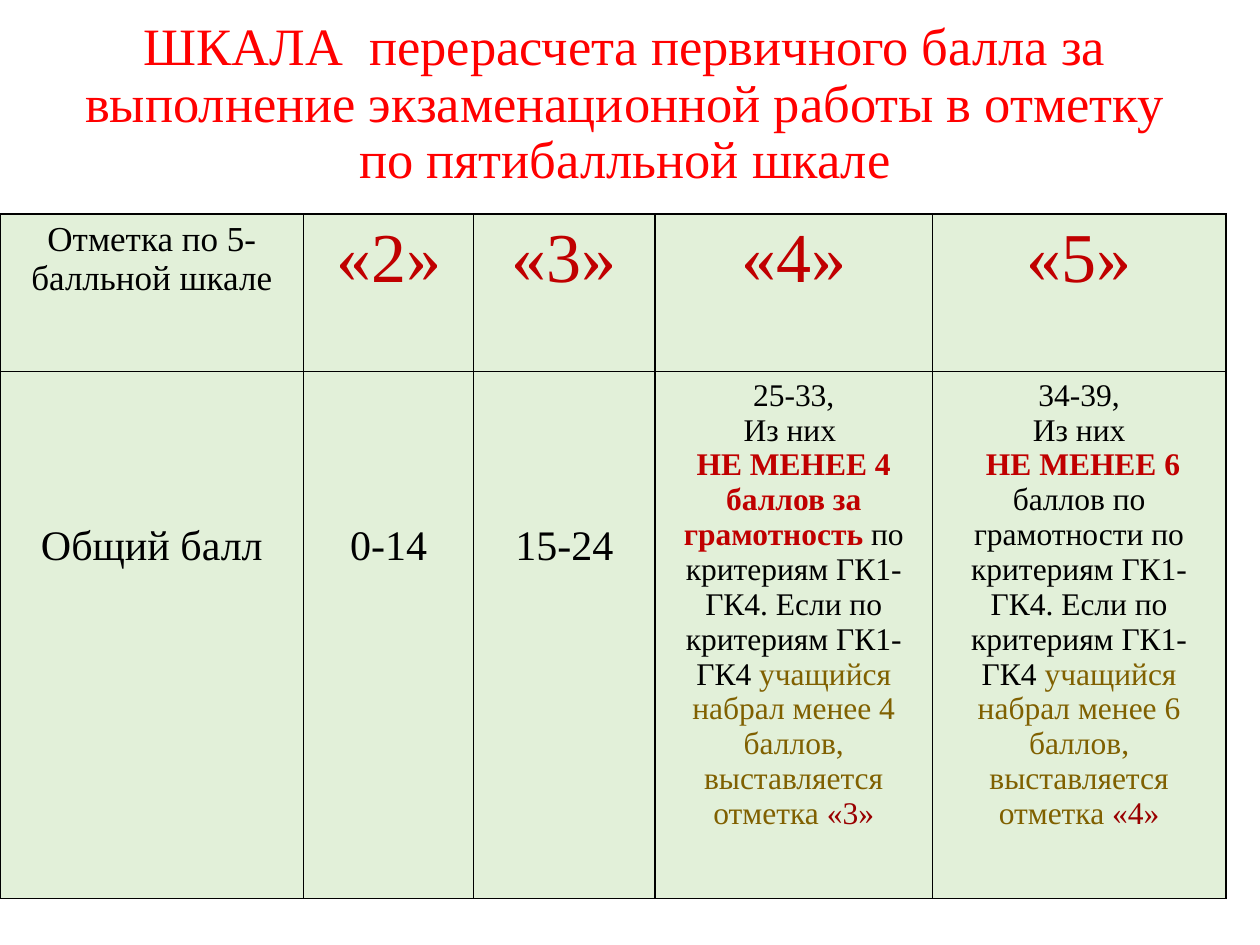
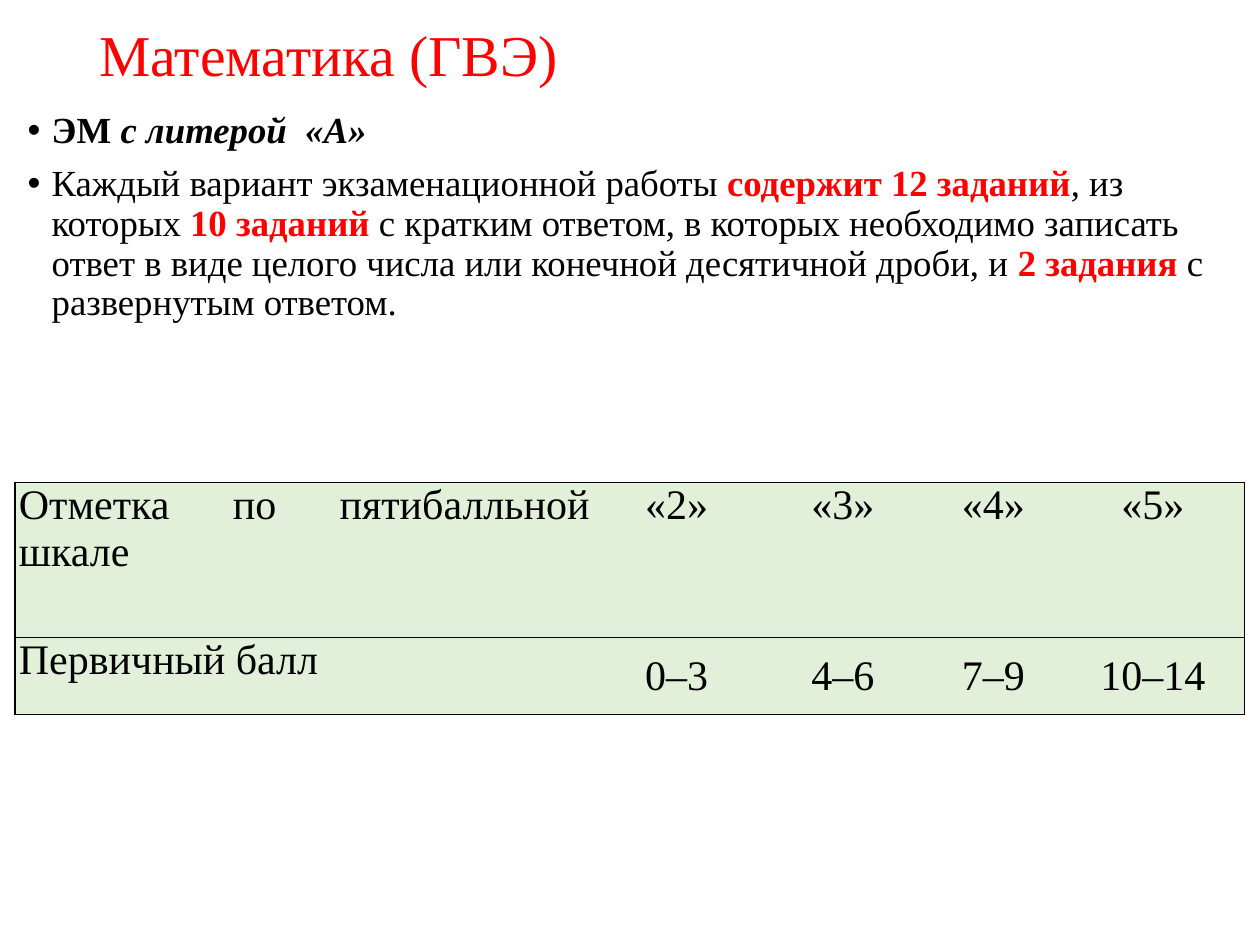
"""Build two slides on converting exam scores to five-point grades."""
import dataclasses

import lxml.etree
import pptx
import pptx.dml.color
import pptx.enum.text
import pptx.oxml.ns
import pptx.util

Inches = pptx.util.Inches
Pt = pptx.util.Pt
RGBColor = pptx.dml.color.RGBColor
Align = pptx.enum.text.PP_ALIGN
Anchor = pptx.enum.text.MSO_ANCHOR
qn = pptx.oxml.ns.qn

FONT = "Times New Roman"
BLACK = RGBColor(0x00, 0x00, 0x00)
RED = RGBColor(0xFF, 0x00, 0x00)
DARK_RED = RGBColor(0xC0, 0x00, 0x00)
MAROON = RGBColor(0x99, 0x00, 0x00)
OLIVE = RGBColor(0x80, 0x60, 0x00)
PALE_GREEN = RGBColor(0xE2, 0xF0, 0xD9)
LINE_SPACING = 0.9
GRADES = ("«2»", "«3»", "«4»", "«5»")


@dataclasses.dataclass
class Span:
    """A stretch of text in one style."""
    text: str
    color: RGBColor = BLACK
    bold: bool = False
    italic: bool = False


def write_paragraphs(frame, paragraphs, size, align):
    """Fill a text frame with paragraphs, each a list of spans."""
    for index, spans in enumerate(paragraphs):
        para = frame.add_paragraph() if index else frame.paragraphs[0]
        para.alignment = align
        for span in spans:
            run = para.add_run()
            run.text = span.text
            run.font.name = FONT
            run.font.size = Pt(size)
            run.font.color.rgb = span.color
            run.font.bold = span.bold
            run.font.italic = span.italic


def place(shape, left, top, width, height):
    """Move and size a shape, in inches."""
    shape.left, shape.top = Inches(left), Inches(top)
    shape.width, shape.height = Inches(width), Inches(height)


def set_title(page, text, position, size, align):
    """Format the title placeholder."""
    title = page.shapes.title
    place(title, *position)
    frame = title.text_frame
    frame.auto_size = pptx.enum.text.MSO_AUTO_SIZE.NONE
    frame.vertical_anchor = Anchor.MIDDLE
    write_paragraphs(frame, [[Span(text, RED)]], size, align)
    frame.paragraphs[0].line_spacing = LINE_SPACING


def set_bullets(page, paragraphs, position, size):
    """Format the body placeholder as a bulleted list."""
    body = page.placeholders[1]
    place(body, *position)
    frame = body.text_frame
    frame.auto_size = pptx.enum.text.MSO_AUTO_SIZE.NONE
    write_paragraphs(frame, paragraphs, size, Align.LEFT)
    for para in frame.paragraphs:
        para.line_spacing = LINE_SPACING
        para.space_before = Pt(7.5)
        properties = para._p.get_or_add_pPr()
        properties.set("marL", str(Inches(0.19)))
        properties.set("indent", str(-Inches(0.19)))
        lxml.etree.SubElement(properties, qn("a:buChar")).set("char", "•")


def set_borders(cell, sides):
    """Draw one-point black borders on the named sides and clear the others."""
    properties = cell._tc.get_or_add_tcPr()
    for side in "LRTB":
        line = lxml.etree.SubElement(properties, qn(f"a:ln{side}"))
        line.set("w", str(Pt(1)))
        if side in sides:
            fill = lxml.etree.SubElement(line, qn("a:solidFill"))
            lxml.etree.SubElement(fill, qn("a:srgbClr")).set("val", str(BLACK))
        else:
            lxml.etree.SubElement(line, qn("a:noFill"))


def add_grid(page, left, top, widths, heights):
    """Add a plain table with the given column widths and row heights."""
    table = page.shapes.add_table(
        len(heights), len(widths), Inches(left), Inches(top),
        Inches(sum(widths)), Inches(sum(heights))).table
    table.first_row = table.horz_banding = False
    for column, width in zip(table.columns, widths):
        column.width = Inches(width)
    for row, height in zip(table.rows, heights):
        row.height = Inches(height)
    return table


def fill_cell(cell, paragraphs, size, margins, sides="LRTB",
              align=Align.CENTER, anchor=Anchor.TOP):
    """Write a green table cell; margins are (side, top, bottom) in inches."""
    side, top, bottom = margins
    cell.margin_left = cell.margin_right = Inches(side)
    cell.margin_top, cell.margin_bottom = Inches(top), Inches(bottom)
    cell.vertical_anchor = anchor
    set_borders(cell, sides)
    cell.fill.solid()
    cell.fill.fore_color.rgb = PALE_GREEN
    write_paragraphs(cell.text_frame, paragraphs, size, align)


def grade_rule(score, of_them, minimum, shortfall, lower_grade):
    """Return the paragraphs that explain a grade with a literacy minimum."""
    return [
        [Span(score)],
        [Span(of_them)],
        minimum + [
            Span("по критериям ГК1-ГК4. Если по критериям ГК1-ГК4 "),
            Span(f"учащийся набрал менее {shortfall} баллов, "
                 "выставляется отметка ", OLIVE),
            Span(lower_grade, MAROON)],
    ]


def build_scale_page(deck):
    """Build the slide with the general conversion scale."""
    page = deck.slides.add_slide(deck.slide_layouts[5])
    set_title(page, "ШКАЛА  перерасчета первичного балла за выполнение "
              "экзаменационной работы в отметку по пятибалльной шкале",
              (0.35, 0.1, 9.22, 1.47), 30, Align.CENTER)
    table = add_grid(page, 0, 1.7, (2.41, 1.35, 1.44, 2.2, 2.33), (1.25, 4.18))
    margins = (0.1, 0.05, 0.05)
    lowered = (0.1, 1.2, 0.05)
    fill_cell(table.cell(0, 0), [[Span("Отметка по 5-балльной шкале")]],
              20, margins)
    for column, grade in enumerate(GRADES, 1):
        fill_cell(table.cell(0, column), [[Span(grade, DARK_RED)]], 40, margins)
    for column, text in enumerate(("Общий балл", "0-14", "15-24")):
        fill_cell(table.cell(1, column), [[Span(text)]], 24, lowered)
    rules = (
        grade_rule("25-33,", "Из них ",
                   [Span("НЕ МЕНЕЕ 4 баллов за грамотность ", DARK_RED, True)],
                   4, "«3»"),
        grade_rule("34-39,", "Из них",
                   [Span(" "), Span("НЕ МЕНЕЕ 6", DARK_RED, True),
                    Span(" баллов по грамотности ")],
                   6, "«4»"),
    )
    for column, rule in enumerate(rules, 3):
        fill_cell(table.cell(1, column), rule, 18, margins)


def build_math_page(deck):
    """Build the slide on the mathematics exam."""
    page = deck.slides.add_slide(deck.slide_layouts[1])
    set_title(page, "Математика (ГВЭ)", (0.69, 0.12, 8.62, 0.67),
              33, Align.LEFT)
    set_bullets(page, [
        [Span("ЭМ", bold=True),
         Span(" с литерой  «А»", bold=True, italic=True)],
        [Span("Каждый вариант экзаменационной работы "),
         Span("содержит 12 заданий", RED, True),
         Span(", из которых "),
         Span("10 заданий ", RED, True),
         Span("с кратким ответом, в которых необходимо записать ответ в виде "
              "целого числа или конечной десятичной дроби, и "),
         Span("2 задания ", RED, True),
         Span("с развернутым ответом.")],
    ], (0.12, 0.84, 9.76, 5.04), 21)
    rows = (("Отметка по пятибалльной шкале",) + GRADES,
            ("Первичный балл", "0–3", "4–6", "7–9", "10–14"))
    table = add_grid(page, 0.12, 3.83, (4.59, 1.32, 1.32, 1.07, 1.46),
                     (1.23, 0.61))
    outer_sides = {0: "LTB", 4: "RTB"}
    for row, texts in enumerate(rows):
        for column, text in enumerate(texts):
            fill_cell(table.cell(row, column), [[Span(text)]], 24,
                      (0.03, 0, 0), outer_sides.get(column, "TB"),
                      Align.CENTER if column else Align.JUSTIFY,
                      Anchor.MIDDLE if row and column else Anchor.TOP)


def main():
    """Build and save the deck."""
    deck = pptx.Presentation()
    deck.slide_width, deck.slide_height = Inches(10), Inches(7.5)
    build_scale_page(deck)
    build_math_page(deck)
    deck.save("out.pptx")


if __name__ == "__main__":
    main()
